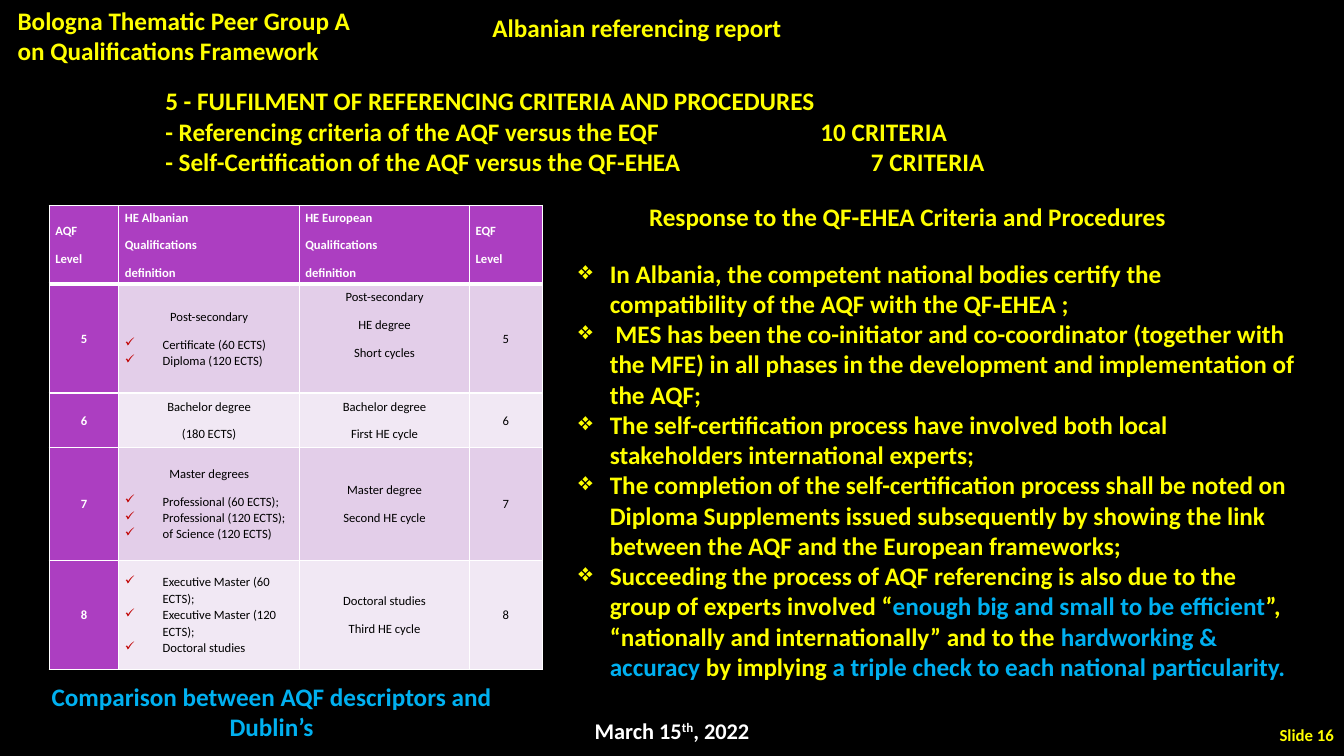
from lxml.etree import SubElement
from pptx import Presentation
from pptx.dml.color import RGBColor
from pptx.enum.text import MSO_ANCHOR as Anchor, MSO_AUTO_SIZE as AutoSize, PP_ALIGN as Align
from pptx.oxml.ns import qn
from pptx.util import Pt

YELLOW, BLUE, WHITE, BLACK = "FFFF00", "00B0F0", "FFFFFF", "000000"
PURPLE, LILAC, PALE, RED = "AC3EC1", "E3CEE9", "F1E8F4", "C00000"


def colour(hex_string):
    return RGBColor.from_string(hex_string)


class SlideBuilder:
    font_name = "Calibri"

    def __init__(self, slide):
        self.slide = slide

    def background(self, hex_string):
        fill = self.slide.background.fill
        fill.solid()
        fill.fore_color.rgb = colour(hex_string)

    def run(self, paragraph, text, size=18, hex_string=YELLOW, bold=True, superscript=False):
        run = paragraph.add_run()
        run.text = text
        for name, value in {"name": self.font_name, "size": Pt(size), "bold": bold}.items():
            setattr(run.font, name, value)
        run.font.color.rgb = colour(hex_string)
        if superscript:
            run.font._element.set("baseline", "30000")

    def bullet(self, paragraph, character, indent, hex_string):
        properties = paragraph._p.get_or_add_pPr()
        properties.set("marL", str(Pt(indent)))
        properties.set("indent", str(-Pt(indent)))
        bullet_colour = SubElement(properties, qn("a:buClr"))
        SubElement(bullet_colour, qn("a:srgbClr"), val=hex_string)
        SubElement(properties, qn("a:buChar"), char=character)

    def tab_stop(self, paragraph, position):
        tabs = SubElement(paragraph._p.get_or_add_pPr(), qn("a:tabLst"))
        SubElement(tabs, qn("a:tab"), pos=str(Pt(position)), algn="l")

    def fill_text(self, frame, paragraphs, align=Align.LEFT, bullet=None, tabs=(), **style):
        for index, runs in enumerate(paragraphs):
            paragraph = frame.add_paragraph() if index else frame.paragraphs[0]
            paragraph.alignment = align
            if bullet:
                self.bullet(paragraph, bullet, 22.5, YELLOW)
            if index < len(tabs) and tabs[index]:
                self.tab_stop(paragraph, tabs[index])
            for text, changes in [(runs, {})] if isinstance(runs, str) else runs:
                self.run(paragraph, text, **{**style, **changes})

    def place(self, shape, box, anchor, grow):
        for name, value in zip(("left", "top", "width", "height"), box):
            setattr(shape, name, Pt(value))
        settings = {
            "word_wrap": True,
            "vertical_anchor": anchor,
            "auto_size": AutoSize.SHAPE_TO_FIT_TEXT if grow else AutoSize.NONE,
        }
        for name, value in settings.items():
            setattr(shape.text_frame, name, value)

    def title(self, text, box):
        shape = self.slide.shapes.title
        self.place(shape, box, Anchor.TOP, True)
        self.fill_text(shape.text_frame, [text], Align.CENTER)

    def text(self, box, paragraphs, anchor=Anchor.TOP, grow=True, **style):
        shape = self.slide.shapes.add_textbox(*map(Pt, box))
        self.place(shape, box, anchor, grow)
        self.fill_text(shape.text_frame, paragraphs, **style)

    def borders(self, cell, bottom_width):
        properties = cell._tc.get_or_add_tcPr()
        widths = {"a:lnL": 1, "a:lnR": 1, "a:lnT": 1, "a:lnB": bottom_width}
        for tag, width in widths.items():
            line = SubElement(properties, qn(tag), w=str(Pt(width)))
            SubElement(SubElement(line, qn("a:solidFill")), qn("a:srgbClr"), val=WHITE)

    def cell(self, cell, lines, fill, align, text_colour, bold, header):
        margins = {"margin_left": 4.3, "margin_right": 4.3, "margin_top": 0, "margin_bottom": 0}
        if len(lines) == 3 and lines[-1] == "Short cycles":
            margins["margin_bottom"] = 20
        for name, value in margins.items():
            setattr(cell, name, Pt(value))
        cell.vertical_anchor = Anchor.MIDDLE
        self.borders(cell, 3 if header else 1)
        cell.fill.solid()
        cell.fill.fore_color.rgb = colour(fill)
        for index, line in enumerate(lines):
            paragraph = cell.text_frame.add_paragraph() if index else cell.text_frame.paragraphs[0]
            ticked = line.startswith("✓")
            if ticked:
                self.bullet(paragraph, "✓", 27, RED)
            last = index == len(lines) - 1
            paragraph.alignment = Align.LEFT if ticked else align
            paragraph.line_spacing = 1.07
            paragraph.space_after = Pt(0 if ticked and not last else 8)
            self.run(paragraph, line.lstrip("✓"), 9, text_colour, bold)

    def table(self, box, widths, heights, rows):
        frame = self.slide.shapes.add_table(len(rows), len(widths), *map(Pt, box))
        table = frame.table
        for column, width in zip(table.columns, widths):
            column.width = Pt(width)
        for row, height in zip(table.rows, heights):
            row.height = Pt(height)
        for row_index, row in enumerate(rows):
            for column_index, lines in enumerate(row):
                header = row_index == 0
                strong = header or column_index == 0
                self.cell(
                    table.cell(row_index, column_index), lines,
                    PURPLE if strong else LILAC if row_index % 2 else PALE,
                    Align.JUSTIFY if header else Align.CENTER,
                    WHITE if strong else BLACK, strong, header,
                )


LEVELS = [
    [["AQF", "Level"], ["HE Albanian", "Qualifications", "definition"],
     ["HE European", "Qualifications", "definition"], ["EQF", "Level"]],
    [["5"], ["Post-secondary", "✓Certificate (60 ECTS)", "✓Diploma (120 ECTS)"],
     ["Post-secondary", "HE degree", "Short cycles"], ["5"]],
    [["6"], ["Bachelor degree", "(180 ECTS)"], ["Bachelor degree", "First HE cycle"], ["6"]],
    [["7"], ["Master degrees", "✓Professional (60 ECTS);", "✓Professional (120 ECTS);",
             "✓of Science (120 ECTS)"], ["Master degree", "Second HE cycle"], ["7"]],
    [["8"], ["✓Executive Master (60 ECTS);", "✓Executive Master (120 ECTS);",
             "✓Doctoral studies"], ["Doctoral studies", "Third HE cycle"], ["8"]],
]

HIGHLIGHT = {"hex_string": BLUE}
RESPONSES = [
    "In Albania, the competent national bodies certify the compatibility of the AQF with the QF‐EHEA ;",
    " MES has been the co-initiator and co-coordinator (together with the MFE) in all phases in the "
    "development and implementation of the AQF;",
    "The self-certification process have involved both local stakeholders international experts;",
    "The completion of the self-certification process shall be noted on Diploma Supplements issued "
    "subsequently by showing the link between the AQF and the European frameworks;",
    [("Succeeding the process of AQF referencing is also due to the group of experts involved “", {}),
     ("enough big and small to be efficient", HIGHLIGHT),
     ("”, “nationally and internationally” and to the ", {}),
     ("hardworking & accuracy ", HIGHLIGHT),
     ("by implying ", {}),
     ("a triple check to each national particularity.", HIGHLIGHT)],
]


def main():
    presentation = Presentation()
    presentation.slide_width, presentation.slide_height = Pt(960), Pt(540)
    builder = SlideBuilder(presentation.slides.add_slide(presentation.slide_layouts[5]))
    builder.background(BLACK)
    builder.title("Albanian referencing report", (288, 5, 334, 29))
    builder.text((290, 508.5, 380, 26.6),
                 [[("March 15", {}), ("th", {"superscript": True}), (", 2022", {})]],
                 align=Align.CENTER, size=16, hex_string=WHITE)
    builder.text((5.5, 0, 270, 51), ["Bologna Thematic Peer Group A", "on Qualifications Framework"])
    builder.text((890, 510, 70, 30), ["Slide 16"], Anchor.MIDDLE, False, align=Align.RIGHT, size=12)
    builder.text((111, 57, 813.5, 73),
                 ["5 - FULFILMENT OF REFERENCING CRITERIA AND PROCEDURES",
                  "- Referencing criteria of the AQF versus the EQF\t10 CRITERIA",
                  "- Self-Certification of the AQF versus the QF-EHEA\t7 CRITERIA"],
                 Anchor.MIDDLE, tabs=(None, 468, 504))
    builder.table((35.2, 146.8, 352, 331.3), (49.7, 128.9, 121.7, 51.8),
                  (56.2, 77.8, 38.9, 80.6, 77.8), LEVELS)
    builder.text((29.5, 483, 329, 51), ["Comparison between AQF descriptors and Dublin’s"],
                 align=Align.CENTER, hex_string=BLUE)
    builder.text((456.5, 140.5, 480, 29), ["Response to the QF-EHEA Criteria and Procedures"])
    builder.text((406, 180.7, 530.6, 334), RESPONSES, grow=False, bullet="❖")
    presentation.save("out.pptx")


if __name__ == "__main__":
    main()
